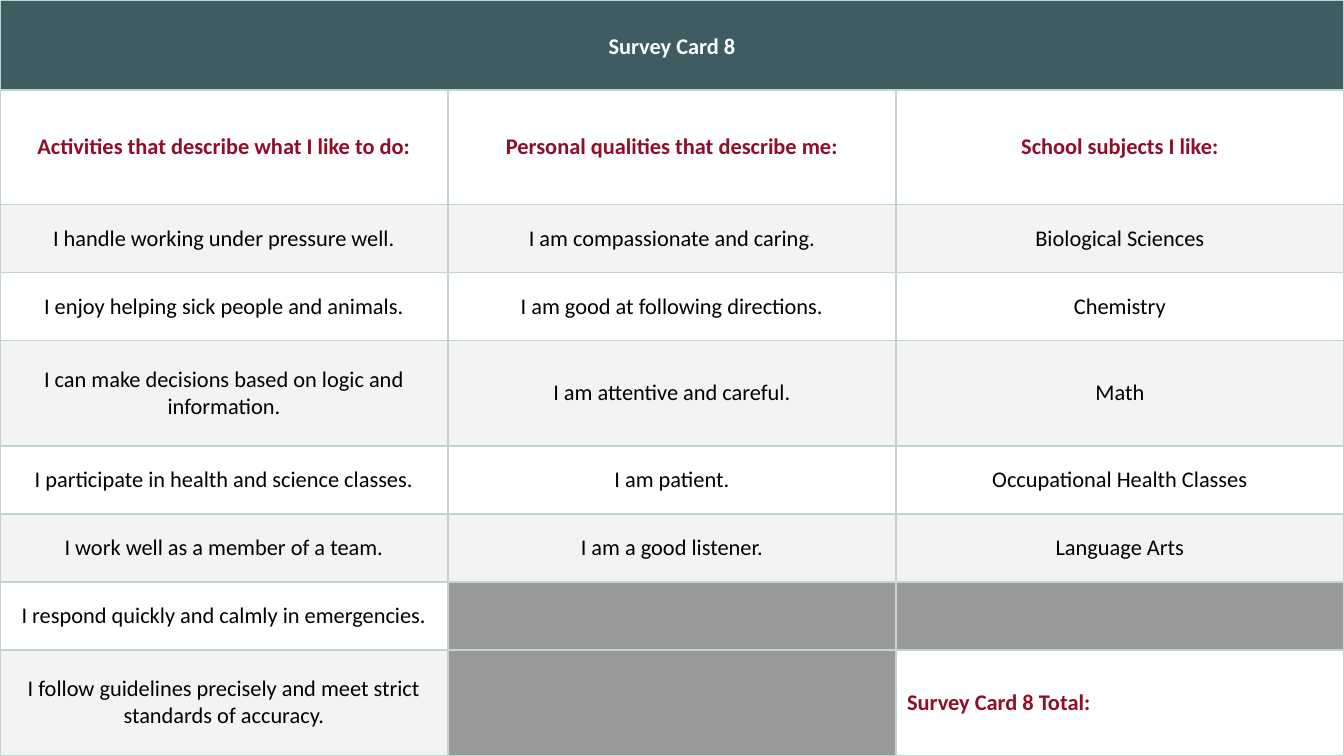
from lxml.etree import SubElement
from pptx import Presentation
from pptx.dml.color import RGBColor
from pptx.enum.text import MSO_ANCHOR as Anchor, PP_ALIGN as Align
from pptx.oxml.ns import qn
from pptx.util import Pt

TEAL = RGBColor(0x3E, 0x5C, 0x61)
CRIMSON = RGBColor(0x91, 0x0D, 0x28)
BLACK = RGBColor(0, 0, 0)
WHITE = RGBColor(0xFF, 0xFF, 0xFF)
BAND = RGBColor(0xF3, 0xF3, 0xF3)
GREY = RGBColor(0x99, 0x99, 0x99)
BORDER = RGBColor(0xBE, 0xD7, 0xD3)

SLIDE_W, SLIDE_H = 720, 405
ROW_HEIGHTS = [48.2, 61.4, 36.4, 36.4, 56.6, 36.4, 36.4, 36.4, 56.6]
INSET = Pt(6)

HEADINGS = [
    "Activities that describe what I like to do:",
    "Personal qualities that describe me:",
    "School subjects I like:",
]
STATEMENTS = [
    ["I handle working under pressure well.", "I am compassionate and caring.", "Biological Sciences"],
    ["I enjoy helping sick people and animals.", "I am good at following directions.", "Chemistry"],
    ["I can make decisions based on logic and information.", "I am attentive and careful.", "Math"],
    ["I participate in health and science classes.", "I am patient.", "Occupational Health Classes"],
    ["I work well as a member of a team.", "I am a good listener.", "Language Arts"],
    ["I respond quickly and calmly in emergencies.", None, None],
    ["I follow guidelines precisely and meet strict standards of accuracy.", None, None],
]

CELL_FORMAT = {
    "vertical_anchor": Anchor.MIDDLE,
    "margin_left": INSET,
    "margin_right": INSET,
    "margin_top": INSET,
    "margin_bottom": INSET,
}
TITLE_FORMAT = {"alignment": Align.CENTER, "line_spacing": 1.15, "space_after": Pt(6)}
HEADING_FORMAT = {"alignment": Align.CENTER, "space_before": Pt(10)}
STATEMENT_FORMAT = {"alignment": Align.CENTER}
TOTAL_FORMAT = {"alignment": Align.LEFT, "space_before": Pt(10)}


def apply_format(target, values):
    for name, value in values.items():
        setattr(target, name, value)


def add_borders(cell):
    """Draw the four cell edges; call before the fill, which must follow them."""
    properties = cell._tc.get_or_add_tcPr()
    for edge in ("a:lnL", "a:lnR", "a:lnT", "a:lnB"):
        line = SubElement(properties, qn(edge), w=str(Pt(1)))
        solid = SubElement(line, qn("a:solidFill"))
        SubElement(solid, qn("a:srgbClr"), val=str(BORDER))


def paint(cell, color):
    if color is None:
        cell.fill.background()
    else:
        cell.fill.solid()
        cell.fill.fore_color.rgb = color


def write(cell, text, color, bold, paragraph_format):
    apply_format(cell, CELL_FORMAT)
    paragraph = cell.text_frame.paragraphs[0]
    apply_format(paragraph, paragraph_format)
    run = paragraph.add_run()
    run.text = text
    apply_format(run.font, {"name": "Calibri", "size": Pt(12), "bold": bold})
    run.font.color.rgb = color


def add_survey_grid(slide):
    grid = slide.shapes.add_table(
        len(ROW_HEIGHTS), len(HEADINGS), 0, 0, Pt(SLIDE_W), Pt(SLIDE_H)
    ).table
    apply_format(grid, {"first_row": False, "horz_banding": False})
    for column in grid.columns:
        column.width = Pt(SLIDE_W / len(HEADINGS))
    for row, height in zip(grid.rows, ROW_HEIGHTS):
        row.height = Pt(height)
    for cell in grid.iter_cells():
        add_borders(cell)
    return grid


def main():
    deck = Presentation()
    deck.slide_width, deck.slide_height = Pt(SLIDE_W), Pt(SLIDE_H)
    slide = deck.slides.add_slide(deck.slide_layouts[6])
    grid = add_survey_grid(slide)

    # Card title across all columns
    title = grid.cell(0, 0)
    title.merge(grid.cell(0, len(HEADINGS) - 1))
    paint(title, TEAL)
    write(title, "Survey Card 8", WHITE, True, TITLE_FORMAT)

    # Column headings
    for column, heading in enumerate(HEADINGS):
        cell = grid.cell(1, column)
        paint(cell, None)
        write(cell, heading, CRIMSON, True, HEADING_FORMAT)

    # Banded statements, with unused cells greyed out
    for index, statements in enumerate(STATEMENTS):
        band = BAND if index % 2 == 0 else None
        for column, statement in enumerate(statements):
            cell = grid.cell(index + 2, column)
            paint(cell, band if statement else GREY)
            if statement:
                write(cell, statement, BLACK, False, STATEMENT_FORMAT)

    # Total in the last cell
    total = grid.cell(len(ROW_HEIGHTS) - 1, len(HEADINGS) - 1)
    paint(total, WHITE)
    write(total, "Survey Card 8 Total:", CRIMSON, True, TOTAL_FORMAT)

    deck.save("out.pptx")


if __name__ == "__main__":
    main()
